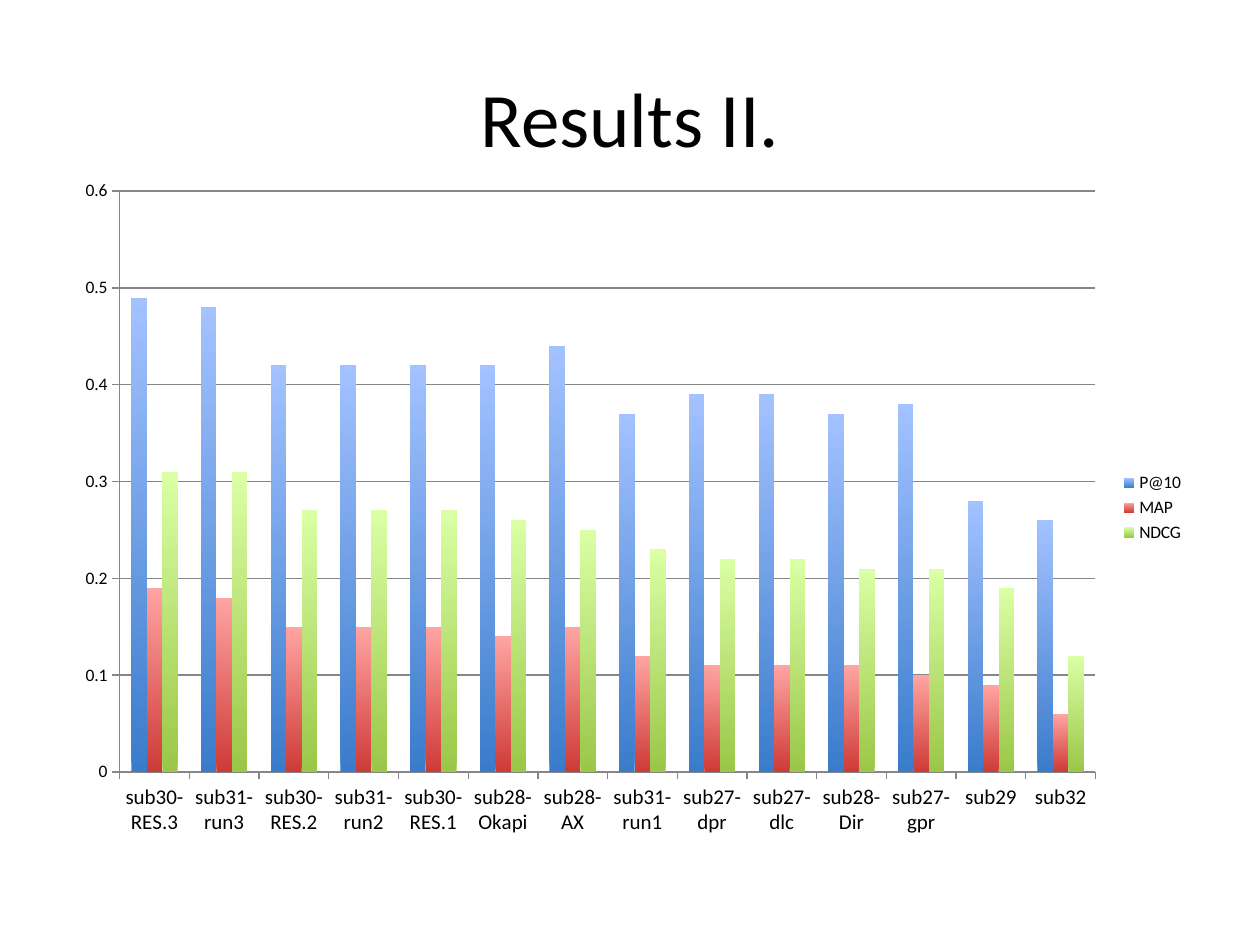
from pptx import Presentation
from pptx.chart.data import CategoryChartData
from pptx.dml.color import RGBColor
from pptx.enum.chart import XL_CHART_TYPE, XL_LEGEND_POSITION, XL_TICK_MARK
from pptx.enum.text import MSO_ANCHOR, PP_ALIGN
from pptx.util import Inches, Pt

FONT = "Calibri"
BLACK = RGBColor(0x00, 0x00, 0x00)
GRAY = RGBColor(0x86, 0x86, 0x86)

RUNS = ["sub30-RES.3", "sub31-run3", "sub30-RES.2", "sub31-run2", "sub30-RES.1",
        "sub28-Okapi", "sub28-AX", "sub31-run1", "sub27-dpr", "sub27-dlc",
        "sub28-Dir", "sub27-gpr", "sub29", "sub32"]
SCORES = {
    "P@10": [0.49, 0.48, 0.42, 0.42, 0.42, 0.42, 0.44,
             0.37, 0.39, 0.39, 0.37, 0.38, 0.28, 0.26],
    "MAP": [0.19, 0.18, 0.15, 0.15, 0.15, 0.14, 0.15,
            0.12, 0.11, 0.11, 0.11, 0.1, 0.09, 0.06],
    "NDCG": [0.31, 0.31, 0.27, 0.27, 0.27, 0.26, 0.25,
             0.23, 0.22, 0.22, 0.21, 0.21, 0.19, 0.12],
}
# Bottom and top colour of each measure's bars
GRADIENTS = {
    "P@10": (RGBColor(0x3A, 0x7C, 0xCB), RGBColor(0xA3, 0xC2, 0xFF)),
    "MAP": (RGBColor(0xCE, 0x3B, 0x37), RGBColor(0xFF, 0xA4, 0xA2)),
    "NDCG": (RGBColor(0x9B, 0xC7, 0x48), RGBColor(0xDA, 0xFF, 0xA5)),
}


def add_title(slide, text, box):
    tf = slide.shapes.add_textbox(*box).text_frame
    tf.word_wrap = True
    tf.vertical_anchor = MSO_ANCHOR.MIDDLE
    p = tf.paragraphs[0]
    p.text = text
    p.alignment = PP_ALIGN.CENTER
    p.font.name, p.font.size = FONT, Pt(44)
    p.font.color.rgb = BLACK


def style_axis(axis, size):
    axis.major_tick_mark = XL_TICK_MARK.OUTSIDE
    axis.minor_tick_mark = XL_TICK_MARK.NONE
    axis.format.line.color.rgb = GRAY
    axis.tick_labels.font.size = Pt(size)


def fill_bars(series, colors):
    """Shade the bars upwards from the first colour to the second."""
    fill = series.format.fill
    fill.gradient()
    fill.gradient_angle = 90
    for stop, color in zip(fill.gradient_stops, colors):
        stop.color.rgb = color


def add_score_chart(slide, box):
    data = CategoryChartData(number_format="General")
    data.categories = RUNS
    for name, values in SCORES.items():
        data.add_series(name, values)
    chart = slide.shapes.add_chart(XL_CHART_TYPE.COLUMN_CLUSTERED, *box, data).chart
    chart.has_title = False
    chart.font.name, chart.font.size = FONT, Pt(10)
    chart.font.color.rgb = BLACK

    chart.has_legend = True
    chart.legend.position = XL_LEGEND_POSITION.RIGHT
    chart.legend.include_in_layout = False

    style_axis(chart.category_axis, 12)
    axis = chart.value_axis
    style_axis(axis, 10)
    axis.minimum_scale, axis.maximum_scale, axis.major_unit = 0, 0.6, 0.1
    axis.has_major_gridlines = True
    axis.major_gridlines.format.line.color.rgb = GRAY

    plot = chart.plots[0]
    plot.vary_by_categories = False
    plot.gap_width, plot.overlap = 150, 0
    for series in plot.series:
        fill_bars(series, GRADIENTS[series.name])


def main():
    prs = Presentation()
    prs.slide_width, prs.slide_height = Inches(10), Inches(7.5)
    slide = prs.slides.add_slide(prs.slide_layouts[6])
    left, width = Inches(0.5), Inches(9)
    add_title(slide, "Results II.", (left, Inches(0.3), width, Inches(1.25)))
    add_score_chart(slide, (left, Inches(1.33), width, Inches(5.4)))
    prs.save("out.pptx")


if __name__ == "__main__":
    main()
